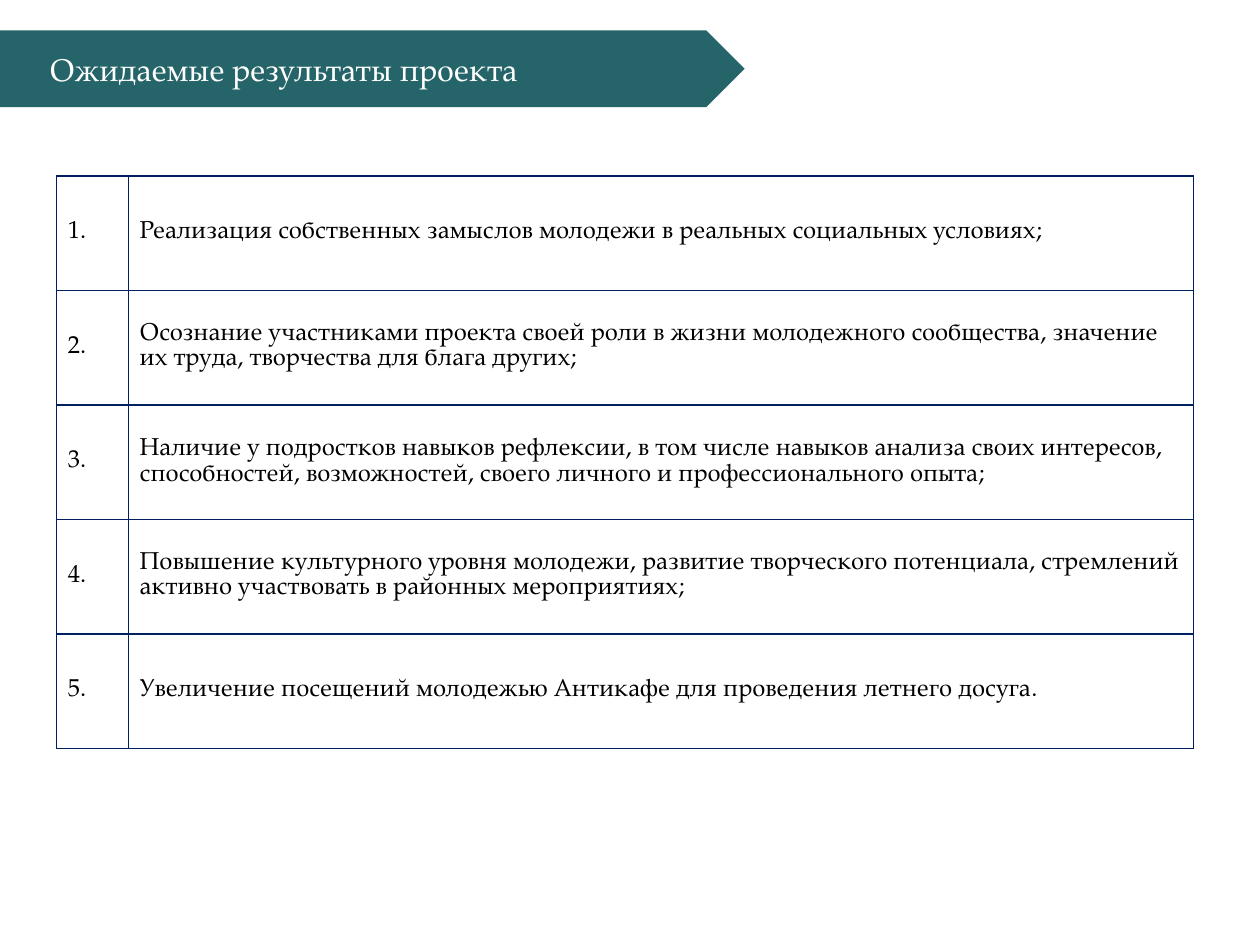
"""Builds the slide listing the expected results of the project."""
from dataclasses import dataclass
from typing import Optional

from lxml.etree import SubElement
from pptx import Presentation
from pptx.dml.color import RGBColor
from pptx.enum.shapes import MSO_SHAPE
from pptx.enum.text import MSO_ANCHOR, PP_ALIGN
from pptx.oxml.ns import qn
from pptx.util import Pt

TEAL = RGBColor(0x25, 0x65, 0x69)
NAVY = RGBColor(0x00, 0x20, 0x60)
BLACK = RGBColor(0x00, 0x00, 0x00)
WHITE = RGBColor(0xFF, 0xFF, 0xFF)
FONT = "TeX Gyre Pagella"

COLUMN_WIDTHS = (Pt(41.1), Pt(608.6))
ROW_HEIGHT = Pt(65.4)


@dataclass(frozen=True)
class Result:
    text: str
    line_spacing: Optional[float] = None
    space_after: Optional[float] = None


RESULTS = (
    Result("Реализация собственных замыслов молодежи в реальных социальных условиях;"),
    Result("Осознание участниками проекта своей роли в жизни молодежного сообщества, "
           "значение их труда, творчества для блага других;"),
    Result("Наличие у подростков навыков рефлексии, в том числе навыков анализа своих "
           "интересов, способностей, возможностей, своего личного и профессионального опыта;",
           line_spacing=1.07, space_after=8),
    Result("Повышение культурного уровня молодежи, развитие творческого потенциала, "
           "стремлений активно участвовать в районных мероприятиях;"),
    Result("Увеличение посещений молодежью Антикафе для проведения летнего досуга."),
)


def write_text(frame, text: str, *, size: float = 14, color: RGBColor = BLACK,
               line_spacing: Optional[float] = None,
               space_after: Optional[float] = None) -> None:
    frame.word_wrap = True
    paragraph = frame.paragraphs[0]
    paragraph.alignment = PP_ALIGN.LEFT
    if line_spacing is not None:
        paragraph.line_spacing = line_spacing
    if space_after is not None:
        paragraph.space_after = Pt(space_after)
    run = paragraph.add_run()
    run.text = text
    run.font.name = FONT
    run.font.size = Pt(size)
    run.font.color.rgb = color


def format_cell(cell) -> None:
    cell.vertical_anchor = MSO_ANCHOR.MIDDLE
    cell.margin_left = cell.margin_right = Pt(6.5)
    cell.margin_top = cell.margin_bottom = Pt(3)
    properties = cell._tc.get_or_add_tcPr()
    for side in ("a:lnL", "a:lnR", "a:lnT", "a:lnB"):
        border = SubElement(properties, qn(side), w=str(Pt(1)))
        SubElement(SubElement(border, qn("a:solidFill")), qn("a:srgbClr"), val=str(NAVY))
    cell.fill.background()


def add_results(slide, results: tuple[Result, ...]) -> None:
    table = slide.shapes.add_table(
        len(results), len(COLUMN_WIDTHS), Pt(32.3), Pt(100.6),
        sum(COLUMN_WIDTHS), ROW_HEIGHT * len(results)).table
    table.first_row = table.horz_banding = False
    for column, width in zip(table.columns, COLUMN_WIDTHS):
        column.width = width
    for index, result in enumerate(results):
        table.rows[index].height = ROW_HEIGHT
        number, description = table.rows[index].cells
        format_cell(number)
        format_cell(description)
        write_text(number.text_frame, f"{index + 1}.")
        write_text(description.text_frame, result.text,
                   line_spacing=result.line_spacing, space_after=result.space_after)


def add_heading(slide, text: str) -> None:
    banner = slide.shapes.add_shape(MSO_SHAPE.PENTAGON, Pt(0), Pt(17.3), Pt(425.5), Pt(43.9))
    banner.shadow.inherit = False
    banner.fill.solid()
    banner.fill.fore_color.rgb = TEAL
    banner.line.fill.background()

    heading = slide.shapes.add_textbox(Pt(20.4), Pt(24.5), Pt(404.6), Pt(29.5)).text_frame
    heading.vertical_anchor = MSO_ANCHOR.MIDDLE
    heading.margin_left = heading.margin_right = Pt(8)
    heading.margin_top = heading.margin_bottom = Pt(4)
    write_text(heading, text, size=18, color=WHITE)


def main() -> None:
    presentation = Presentation()
    presentation.slide_width, presentation.slide_height = Pt(720), Pt(540)
    slide = presentation.slides.add_slide(presentation.slide_layouts[6])
    add_results(slide, RESULTS)
    add_heading(slide, "Ожидаемые результаты проекта")
    presentation.save("out.pptx")


if __name__ == "__main__":
    main()
